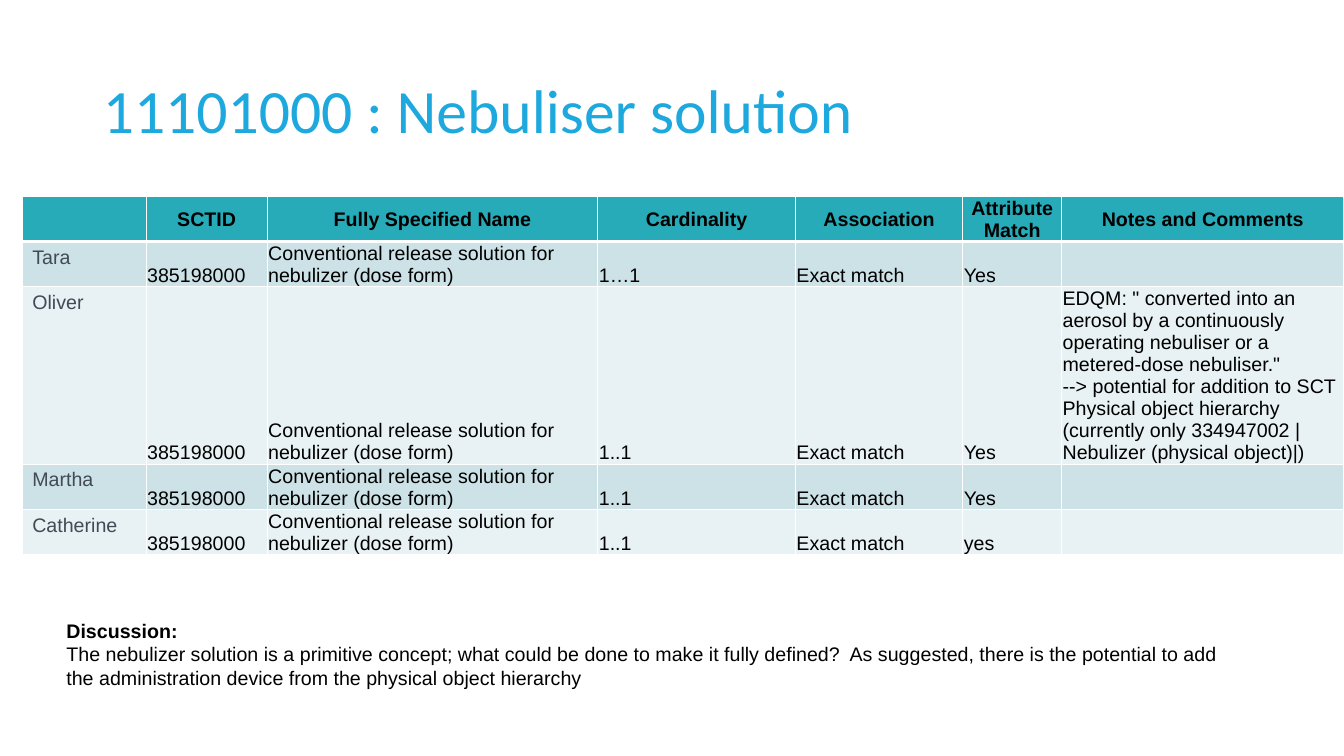
from lxml import etree
from pptx import Presentation
from pptx.dml.color import RGBColor
from pptx.enum import text
from pptx.oxml import ns
from pptx.util import Inches, Pt

BLUE = RGBColor(0x1D, 0xA8, 0xDE)
TEAL = RGBColor(0x27, 0xAB, 0xB8)
BAND_DARK = RGBColor(0xCD, 0xE2, 0xE6)
BAND_LIGHT = RGBColor(0xE8, 0xF1, 0xF3)
GREY = RGBColor(0x42, 0x4A, 0x55)
BLACK = RGBColor(0, 0, 0)
WHITE = RGBColor(255, 255, 255)

COLUMN_WIDTHS = [1.23, 1.2, 3.28, 1.96, 1.66, 0.98, 2.8]
ROW_HEIGHTS = [0.44, 0.44, 1.76, 0.45, 0.45]
HEADINGS = ["", "SCTID", "Fully Specified Name", "Cardinality", "Association",
            "Attribute Match", "Notes and Comments"]
SCTID = "385198000"
FULL_NAME = "Conventional release solution for nebulizer (dose form)"
EDQM_NOTE = ('EDQM: " converted into an aerosol by a continuously operating nebuliser '
             'or a metered-dose nebuliser." \v--> potential for addition to SCT Physical '
             'object hierarchy (currently only 334947002 |Nebulizer (physical object)|)')
REVIEWS = [("Tara", "1…1", "Yes", ""), ("Oliver", "1..1", "Yes", EDQM_NOTE),
           ("Martha", "1..1", "Yes", ""), ("Catherine", "1..1", "yes", "")]
DISCUSSION = ("The nebulizer solution is a primitive concept; what could be done to make it "
              "fully defined?  As suggested, there is the potential to add the "
              "administration device from the physical object hierarchy")


def style_font(paragraph, name, size, color, bold=False):
    """Set the font shared by all runs of a paragraph."""
    font = paragraph.font
    font.name, font.size, font.bold = name, Pt(size), bold
    font.color.rgb = color


def place(shape, left, top, width, height):
    """Move a shape to a box given in inches."""
    shape.left, shape.top = Inches(left), Inches(top)
    shape.width, shape.height = Inches(width), Inches(height)


def add_title(slide, left, top, width, height):
    """Fill and format the title placeholder."""
    title = slide.shapes.title
    place(title, left, top, width, height)
    frame = title.text_frame
    frame.text = "11101000 : Nebuliser solution"
    frame.vertical_anchor = text.MSO_ANCHOR.MIDDLE
    frame.auto_size = text.MSO_AUTO_SIZE.NONE
    paragraph = frame.paragraphs[0]
    paragraph.alignment = text.PP_ALIGN.LEFT
    paragraph.line_spacing = 0.9
    style_font(paragraph, "Calibri", 44, BLUE)


def set_borders(cell, top, bottom):
    """Draw white cell borders, with top and bottom widths in points."""
    properties = cell._tc.get_or_add_tcPr()
    widths = {"lnL": 1, "lnR": 1, "lnT": top, "lnB": bottom}
    for index, (side, width) in enumerate(widths.items()):
        line = etree.Element(ns.qn(f"a:{side}"), w=str(Pt(width)))
        fill = etree.SubElement(line, ns.qn("a:solidFill"))
        etree.SubElement(fill, ns.qn("a:srgbClr"), val=str(WHITE))
        properties.insert(index, line)


def fill_cell(cell, content, row, column):
    """Write one cell and format it by its row and column."""
    header = row == 0
    cell.fill.solid()
    cell.fill.fore_color.rgb = TEAL if header else (BAND_LIGHT, BAND_DARK)[row % 2]
    set_borders(cell, 3 if row == 1 else 1, 3 if header else 1)
    cell.text = content
    paragraph = cell.text_frame.paragraphs[0]
    if column:
        cell.margin_left = cell.margin_right = cell.margin_top = Inches(0.01)
        cell.margin_bottom = 0
        cell.vertical_anchor = text.MSO_ANCHOR.MIDDLE if header else text.MSO_ANCHOR.BOTTOM
    if header:
        paragraph.alignment = text.PP_ALIGN.CENTER
    style_font(paragraph, "Arial", 14, BLACK if header or column else GREY, header)


def add_review_table(slide, left, top):
    """Add the table of reviewers with its top left corner at the given place."""
    rows = [HEADINGS] + [[name, SCTID, FULL_NAME, cardinality, "Exact match", match, note]
                         for name, cardinality, match, note in REVIEWS]
    table = slide.shapes.add_table(
        len(rows), len(HEADINGS), Inches(left), Inches(top),
        Inches(sum(COLUMN_WIDTHS)), Inches(sum(ROW_HEIGHTS))).table
    for column, width in zip(table.columns, COLUMN_WIDTHS):
        column.width = Inches(width)
    for row, height in zip(table.rows, ROW_HEIGHTS):
        row.height = Inches(height)
    for row, contents in enumerate(rows):
        for column, content in enumerate(contents):
            fill_cell(table.cell(row, column), content, row, column)


def add_discussion(slide, left, top, width, height):
    """Add the discussion heading and its paragraph."""
    box = slide.shapes.add_textbox(*map(Inches, (left, top, width, height)))
    frame = box.text_frame
    frame.word_wrap = True
    frame.auto_size = text.MSO_AUTO_SIZE.SHAPE_TO_FIT_TEXT
    heading, body = frame.paragraphs[0], frame.add_paragraph()
    heading.text, body.text = "Discussion:", DISCUSSION
    style_font(heading, "Arial", 14, BLACK, True)
    style_font(body, "Arial", 14, BLACK)


def main():
    """Build and save the presentation."""
    presentation = Presentation()
    presentation.slide_width, presentation.slide_height = Inches(13.33), Inches(7.5)
    slide = presentation.slides.add_slide(presentation.slide_layouts[5])
    add_title(slide, 0.92, 0.4, 11.5, 1.45)
    add_review_table(slide, 0.22, 1.95)
    add_discussion(slide, 0.56, 6.09, 11.85, 0.81)
    presentation.save("out.pptx")


if __name__ == "__main__":
    main()
